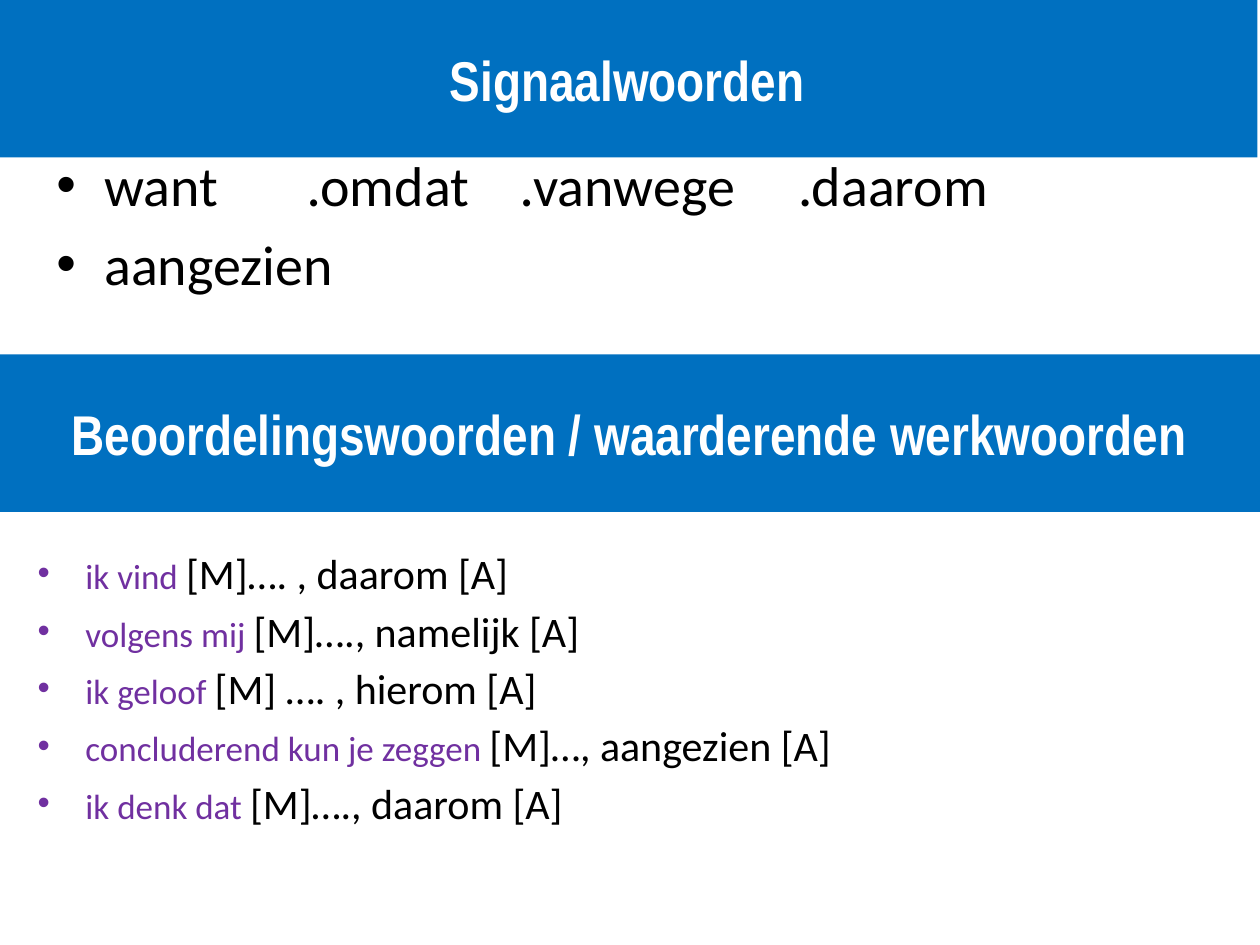
import pptx
import pptx.util
import pptx.dml.color
import pptx.enum.shapes
import pptx.enum.text
import pptx.oxml
import lxml.etree

theme = {
    "blue": "0070C0", "white": "FFFFFF", "black": "000000", "violet": "7030A0",
    "head": "Arial Narrow", "body": "Calibri", "dot": "Lato",
    "large": 32, "mid": 24, "small": 20,
}

deck = pptx.Presentation()
deck.slide_width = pptx.util.Inches(10)
deck.slide_height = pptx.util.Inches(7.5)
wide, high = deck.slide_width, deck.slide_height
slide = deck.slides.add_slide(deck.slide_layouts[6])
ns = pptx.oxml.ns.qn


def style(run, face, size, tint):
    run.font.name = theme[face]
    run.font.size = pptx.util.Pt(theme[size])
    run.font.color.rgb = pptx.dml.color.RGBColor.from_string(theme[tint])


def fill_list(box, rows, gap, stops=()):
    frame = box.text_frame
    frame.word_wrap = True
    for i, row in enumerate(rows):
        para = frame.paragraphs[0] if i == 0 else frame.add_paragraph()
        para.space_before = pptx.util.Pt(gap)
        for text, face, size, tint in row:
            run = para.add_run()
            run.text = text
            style(run, face, size, tint)
        props = para._p.get_or_add_pPr()
        props.set("marL", str(pptx.util.Inches(0.38)))
        props.set("indent", str(-pptx.util.Inches(0.38)))
        lxml.etree.SubElement(props, ns("a:buFont")).set("typeface", "Arial")
        lxml.etree.SubElement(props, ns("a:buChar")).set("char", "•")
        if stops:
            tabs = lxml.etree.SubElement(props, ns("a:tabLst"))
            for stop in stops:
                tab = lxml.etree.SubElement(tabs, ns("a:tab"))
                tab.set("pos", str(pptx.util.Inches(stop)))
                tab.set("algn", "l")


heads = [
    (-0.002, 0, "Signaalwoorden"),
    (0, 0.375, "Beoordelingswoorden / waarderende werkwoorden"),
]
for left, top, text in heads:
    band = slide.shapes.add_shape(
        pptx.enum.shapes.MSO_SHAPE.RECTANGLE,
        int(wide * left), int(high * top), wide, high // 6)
    band.shadow.inherit = False
    band.fill.solid()
    band.fill.fore_color.rgb = pptx.dml.color.RGBColor.from_string(theme["blue"])
    band.line.fill.background()
    frame = band.text_frame
    frame.word_wrap = True
    frame.vertical_anchor = pptx.enum.text.MSO_ANCHOR.MIDDLE
    frame.text = text
    para = frame.paragraphs[0]
    para.alignment = pptx.enum.text.PP_ALIGN.CENTER
    style(para.runs[0], "head", "large", "white")
    para.runs[0].font.bold = True

first = [("want", "body", "large", "black")]
for word in ["omdat", "vanwege", "daarom"]:
    first.append(("\t.", "dot", "large", "black"))
    first.append((word, "body", "large", "black"))
signals = slide.shapes.add_textbox(
    int(wide * 0.035), int(high * 0.153), int(wide * 0.9), int(high * 0.25))
fill_list(signals, [first, [("aangezien", "body", "large", "black")]],
          6.4, [1.99, 3.68, 5.89])

phrases = [
    ("ik vind ", "[M]…. , daarom [A]"),
    ("volgens mij ", "[M]…., namelijk [A]"),
    ("ik geloof ", "[M] …. , hierom [A]"),
    ("concluderend kun je zeggen ", "[M]…, aangezien [A]"),
    ("ik denk dat ", "[M]…., daarom [A]"),
]
lines = [[(start, "body", "small", "violet"), (rest, "body", "mid", "black")]
         for start, rest in phrases]
verbs = slide.shapes.add_textbox(
    int(wide * 0.02), int(high * 0.573), int(wide * 0.9), int(high * 0.39))
fill_list(verbs, lines, 4)

deck.save("out.pptx")
